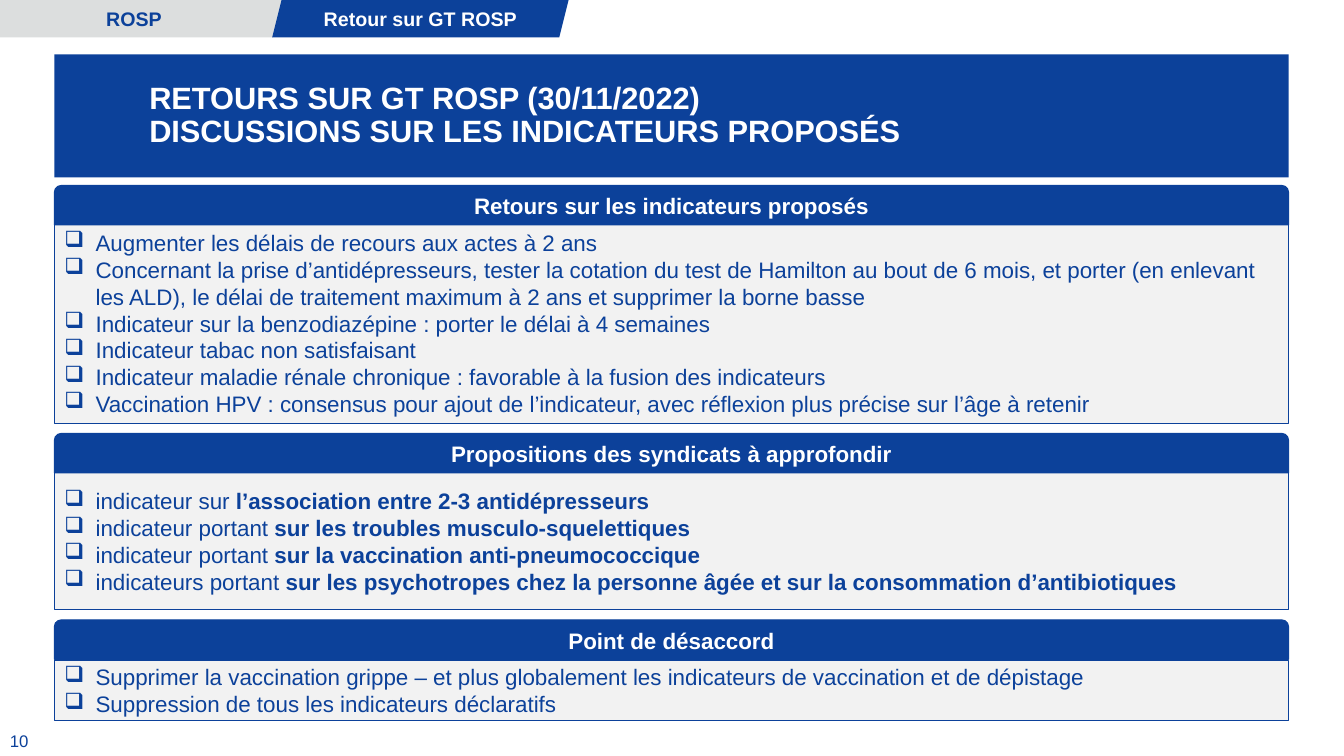
from dataclasses import dataclass

from lxml import etree
from pptx import Presentation
from pptx.dml.color import RGBColor
from pptx.enum.shapes import MSO_SHAPE
from pptx.enum.text import MSO_ANCHOR, MSO_AUTO_SIZE, PP_ALIGN
from pptx.oxml.ns import qn
from pptx.util import Inches, Pt

BLUE = RGBColor(0x0C, 0x41, 0x9A)
WHITE = RGBColor(0xFF, 0xFF, 0xFF)
TAB_GREY = RGBColor(0xDC, 0xDE, 0xDE)
PANEL_GREY = RGBColor(0xF2, 0xF2, 0xF2)

RECT = MSO_SHAPE.RECTANGLE
ROUND_TOP = MSO_SHAPE.ROUND_2_SAME_RECTANGLE
TAB = MSO_SHAPE.PARALLELOGRAM
MIDDLE, TOP = MSO_ANCHOR.MIDDLE, MSO_ANCHOR.TOP
LEFT, CENTER = PP_ALIGN.LEFT, PP_ALIGN.CENTER
NO_FIT = MSO_AUTO_SIZE.NONE

MARGIN, WIDTH = 0.54, 12.24
HEADER_HEIGHT = 0.39
INDENT = Inches(0.31)

TITLE_FORMAT = {"size": Pt(22), "bold": True}
TAB_FORMAT = {"size": Pt(14), "bold": True}
HEADER_FORMAT = {"size": Pt(16), "bold": True}
ITEM_FORMAT = {"size": Pt(16), "bold": False}
NUMBER_FORMAT = {"size": Pt(12), "bold": False}


@dataclass
class Tab:
    text: str
    left: float
    fill: RGBColor
    color: RGBColor


@dataclass
class Section:
    """A headed panel; each item is its plain text and its bold ending."""
    heading: str
    top: float
    body_top: float
    body_height: float
    items: list[tuple[str, str]]


TABS = [
    Tab("ROSP", -0.14, TAB_GREY, BLUE),
    Tab("Retour sur GT ROSP", 2.7, BLUE, WHITE),
]

TITLE_LINES = [
    "RETOURS SUR GT ROSP (30/11/2022)",
    "DISCUSSIONS SUR LES INDICATEURS PROPOSÉS",
]

SECTIONS = [
    Section("Retours sur les indicateurs proposés", 1.84, 2.21, 1.99, [
        ("Augmenter les délais de recours aux actes à 2 ans", ""),
        ("Concernant la prise d’antidépresseurs, tester la cotation du test de "
         "Hamilton au bout de 6 mois, et porter (en enlevant les ALD), le délai "
         "de traitement maximum à 2 ans et supprimer la borne basse", ""),
        ("Indicateur sur la benzodiazépine : porter le délai à 4 semaines", ""),
        ("Indicateur tabac non satisfaisant", ""),
        ("Indicateur maladie rénale chronique : favorable à la fusion des "
         "indicateurs", ""),
        ("Vaccination HPV : consensus pour ajout de l’indicateur, avec réflexion "
         "plus précise sur l’âge à retenir", ""),
    ]),
    Section("Propositions des syndicats à approfondir", 4.3, 4.69, 1.36, [
        ("indicateur sur ", "l’association entre 2-3 antidépresseurs"),
        ("indicateur portant ", "sur les troubles musculo-squelettiques"),
        ("indicateur portant ", "sur la vaccination anti-pneumococcique"),
        ("indicateurs portant ", "sur les psychotropes chez la personne âgée et "
         "sur la consommation d’antibiotiques"),
    ]),
    Section("Point de désaccord", 6.15, 6.55, 0.6, [
        ("Supprimer la vaccination grippe – et plus globalement les indicateurs "
         "de vaccination et de dépistage", ""),
        ("Suppression de tous les indicateurs déclaratifs", ""),
    ]),
]


def add_run(p, text: str, color: RGBColor, text_format: dict) -> None:
    r = p.add_run()
    r.text = text
    r.font.name = "Arial"
    r.font.color.rgb = color
    for name, value in text_format.items():
        setattr(r.font, name, value)


def set_frame(tf, **values) -> None:
    settings = {"word_wrap": True, "auto_size": NO_FIT, "vertical_anchor": MIDDLE}
    for name, value in (settings | values).items():
        setattr(tf, name, value)


def next_paragraph(tf, index: int):
    return tf.add_paragraph() if index else tf.paragraphs[0]


def add_block(slide, kind, left: float, top: float, width: float, height: float,
              fill: RGBColor, outlined: bool = True):
    sp = slide.shapes.add_shape(kind, Inches(left), Inches(top),
                                Inches(width), Inches(height))
    sp.shadow.inherit = False
    sp.fill.solid()
    sp.fill.fore_color.rgb = fill
    if outlined:
        sp.line.color.rgb = BLUE
        sp.line.width = Pt(0.75)
    else:
        sp.line.fill.background()
    set_frame(sp.text_frame)
    return sp


def add_label(sp, text: str, color: RGBColor, text_format: dict) -> None:
    p = sp.text_frame.paragraphs[0]
    p.alignment = CENTER
    add_run(p, text, color, text_format)


def add_bullet(p) -> None:
    pPr = p._p.get_or_add_pPr()
    pPr.set("marL", str(INDENT))
    pPr.set("indent", str(-INDENT))
    etree.SubElement(pPr, qn("a:buChar")).set("char", "❑")


def format_title(slide) -> None:
    sp = slide.shapes.title
    sp.left, sp.top = Inches(MARGIN), Inches(0.54)
    sp.width, sp.height = Inches(WIDTH), Inches(1.22)
    sp.fill.solid()
    sp.fill.fore_color.rgb = BLUE
    tf = sp.text_frame
    inset = Inches(0.08)
    set_frame(tf, margin_left=Inches(0.94), margin_right=inset,
              margin_top=inset, margin_bottom=inset)
    for i, line in enumerate(TITLE_LINES):
        p = next_paragraph(tf, i)
        p.alignment = LEFT
        p.line_spacing = 0.9
        add_run(p, line, WHITE, TITLE_FORMAT)


def add_section(slide, section: Section) -> None:
    body = add_block(slide, RECT, MARGIN, section.body_top, WIDTH,
                     section.body_height, PANEL_GREY)
    for i, (plain, strong) in enumerate(section.items):
        p = next_paragraph(body.text_frame, i)
        p.alignment = LEFT
        add_bullet(p)
        add_run(p, plain, BLUE, ITEM_FORMAT)
        if strong:
            add_run(p, strong, BLUE, HEADER_FORMAT)
    header = add_block(slide, ROUND_TOP, MARGIN, section.top, WIDTH,
                       HEADER_HEIGHT, BLUE)
    set_frame(header.text_frame, vertical_anchor=TOP)
    add_label(header, section.heading, WHITE, HEADER_FORMAT)


def add_page_number(slide, number: str) -> None:
    sp = slide.shapes.add_textbox(0, Inches(7.19), Inches(0.79), Inches(0.31))
    set_frame(sp.text_frame)
    add_run(sp.text_frame.paragraphs[0], number, BLUE, NUMBER_FORMAT)


def main() -> None:
    prs = Presentation()
    prs.slide_width, prs.slide_height = Inches(13.33), Inches(7.5)
    slide = prs.slides.add_slide(prs.slide_layouts[5])
    format_title(slide)
    for tab in TABS:
        sp = add_block(slide, TAB, tab.left, 0, 2.94, 0.37, tab.fill, outlined=False)
        add_label(sp, tab.text, tab.color, TAB_FORMAT)
    for section in SECTIONS:
        add_section(slide, section)
    add_page_number(slide, "10")
    prs.save("out.pptx")


if __name__ == "__main__":
    main()
